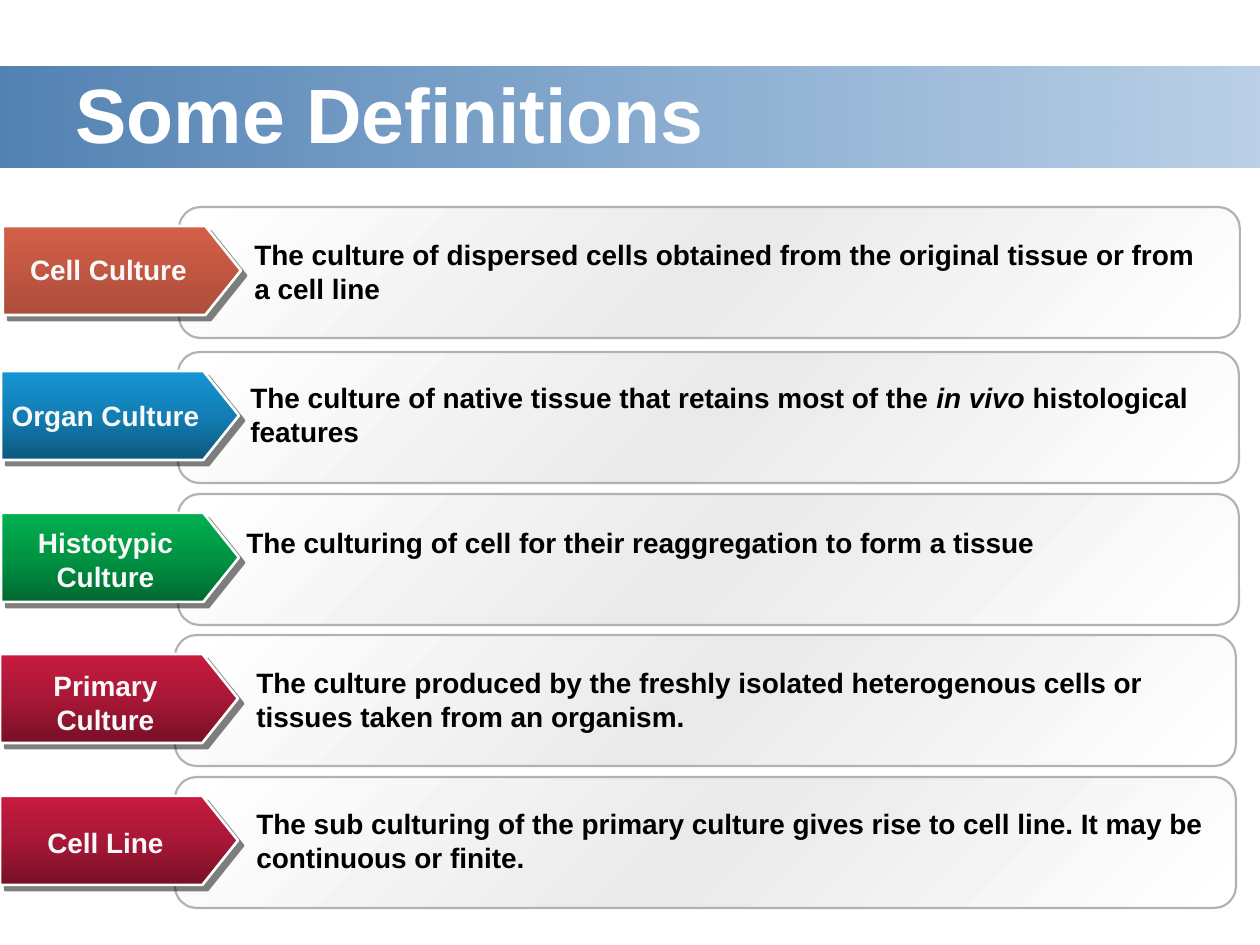
"""Build the "Some Definitions" slide: five labelled arrows, each beside a definition card."""
import lxml.etree
import pptx
import pptx.dml.color
import pptx.enum.shapes
import pptx.enum.text
import pptx.oxml.ns
import pptx.util

EMU_PER_PX = 914400 / 126
SHAPE = pptx.enum.shapes.MSO_SHAPE
ALIGN = pptx.enum.text.PP_ALIGN
qn = pptx.oxml.ns.qn

prs = pptx.Presentation()
prs.slide_width, prs.slide_height = (int(n * EMU_PER_PX) for n in (1260, 945))
s = prs.slides.add_slide(prs.slide_layouts[6])


def add_box(kind, box, stops, angle, line=None, width=0, adj=None, shadow=False):
    sp = s.shapes.add_shape(kind, *(int(n * EMU_PER_PX) for n in box))
    sp.shadow.inherit = False
    if adj is not None:
        sp.adjustments[0] = adj
    if line:
        sp.line.color.rgb = pptx.dml.color.RGBColor.from_string(line)
        sp.line.width = pptx.util.Pt(width)
    else:
        sp.line.fill.background()
    sp.fill.gradient()
    grad = sp._element.spPr.find(qn("a:gradFill"))
    for child in list(grad):
        grad.remove(child)
    gs_list = lxml.etree.SubElement(grad, qn("a:gsLst"))
    for pos, color, alpha in stops:
        gs = lxml.etree.SubElement(gs_list, qn("a:gs"), pos=str(pos * 1000))
        clr = lxml.etree.SubElement(gs, qn("a:srgbClr"), val=color)
        if alpha < 100:
            lxml.etree.SubElement(clr, qn("a:alpha"), val=str(alpha * 1000))
    lxml.etree.SubElement(grad, qn("a:lin"), ang=str(angle * 60000), scaled="0")
    if shadow:
        effects = sp._element.spPr.find(qn("a:effectLst"))
        outer = lxml.etree.SubElement(effects, qn("a:outerShdw"), dist="53340",
                                      dir="2700000", algn="ctr", rotWithShape="0")
        clr = lxml.etree.SubElement(outer, qn("a:srgbClr"), val="000000")
        lxml.etree.SubElement(clr, qn("a:alpha"), val="50000")


def add_text(box, parts, size, color, align=ALIGN.LEFT):
    tf = s.shapes.add_textbox(*(int(n * EMU_PER_PX) for n in box)).text_frame
    tf.word_wrap = True
    tf.vertical_anchor = pptx.enum.text.MSO_ANCHOR.MIDDLE
    p = tf.paragraphs[0]
    p.alignment = align
    for i, part in enumerate(parts):
        r = p.add_run()
        r.text = part
        r.font.name = "Arial"
        r.font.size = pptx.util.Pt(size)
        r.font.bold = True
        r.font.italic = i % 2 == 1
        r.font.color.rgb = pptx.dml.color.RGBColor.from_string(color)


add_box(SHAPE.RECTANGLE, (0, 67, 1260, 101), [(0, "00478F", 68), (100, "0052A4", 27)], 0)
add_text((63, 34, 819, 158), ["Some Definitions"], 44, "FFFFFF")

CARD = [(0, "FFFFFF", 100), (50, "EAEAEA", 100), (100, "FFFFFF", 100)]
ORANGE = [(0, "AD4E3B", 100), (100, "D45F48", 100)]
BLUE = [(0, "0C587E", 100), (50, "127EB4", 100), (100, "1595D5", 100)]
GREEN = [(0, "00682F", 100), (50, "009443", 100), (100, "00B050", 100)]
RED = [(0, "761026", 100), (50, "A81736", 100), (100, "C81B40", 100)]

rows = [
    (179, 207, 3, ORANGE, "Cell Culture", (9, 246, 199, 47), (242, 231, 977, 81),
     ["The culture of dispersed cells obtained from the original tissue or from a cell line"]),
    (178, 352, 1, BLUE, "Organ Culture", (-10, 392, 231, 47), (238, 374, 977, 81),
     ["The culture of native tissue that retains most of the ", "in vivo ",
      "histological features"]),
    (178, 494, 1, GREEN, "Histotypic Culture", (-10, 519, 231, 81), (234, 519, 977, 47),
     ["The culturing of cell for their reaggregation to form a tissue"]),
    (175, 635, 0, RED, "Primary Culture", (6, 662, 199, 81), (244, 659, 977, 81),
     ["The culture produced by the freshly isolated heterogenous cells or "
      "tissues taken from an organism."]),
    (175, 777, 0, RED, "Cell Line", (6, 819, 199, 47), (244, 800, 977, 81),
     ["The sub culturing of the primary culture gives rise to cell line. "
      "It may be continuous or finite."]),
]

for card_x, card_y, tag_x, colors, label, label_box, text_box, parts in rows:
    add_box(SHAPE.ROUNDED_RECTANGLE, (card_x, card_y, 1061, 131), CARD, 45,
            "B2B2B2", 1.25, 0.167)
    add_box(SHAPE.PENTAGON, (tag_x, card_y + 19, 238, 89), colors, 270,
            "FEFFFF", 1.5, 0.4, shadow=True)
    add_text(label_box, [label], 16, "F8F8F8", ALIGN.CENTER)
    add_text(text_box, parts, 16, "000000")

prs.save("out.pptx")
